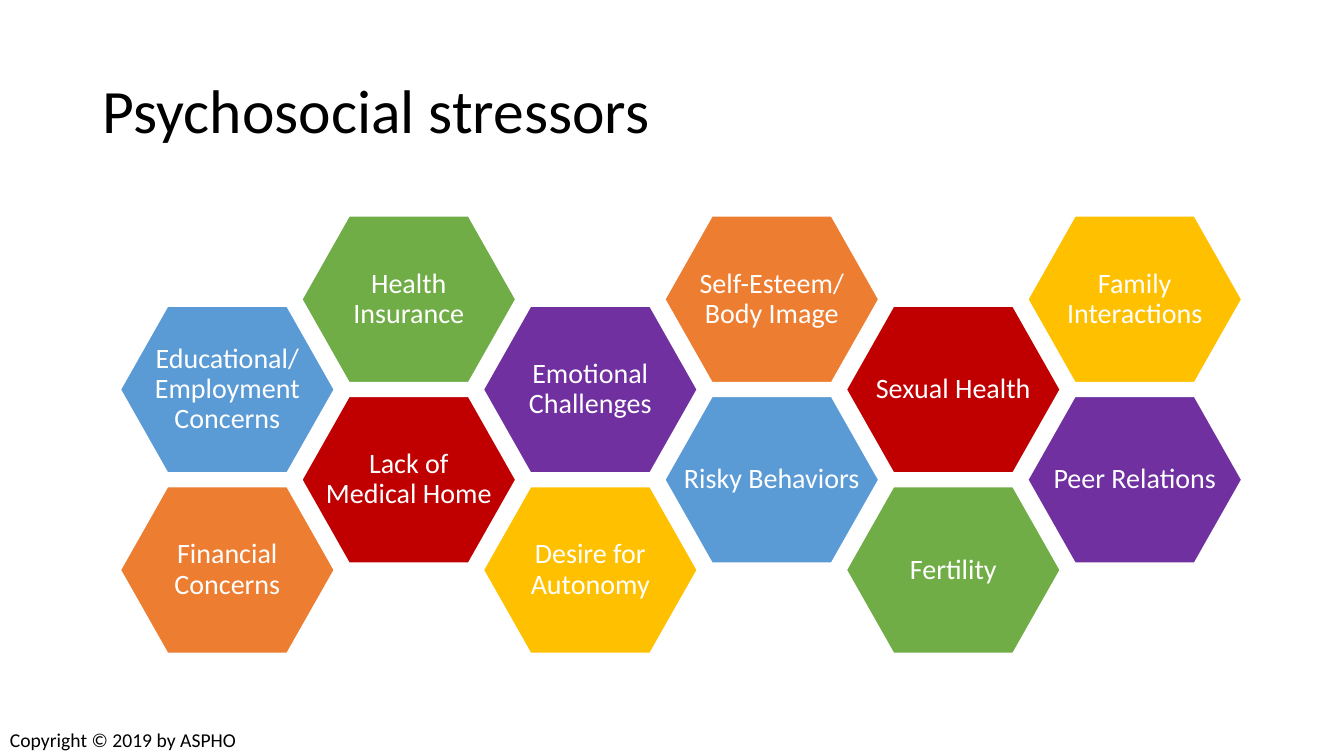
from dataclasses import dataclass

from pptx import Presentation
from pptx.dml.color import RGBColor
from pptx.enum.shapes import MSO_SHAPE
from pptx.enum.text import MSO_ANCHOR, MSO_AUTO_SIZE, PP_ALIGN
from pptx.util import Inches, Pt

TITLE = "Psychosocial stressors"
COPYRIGHT = "Copyright © 2019 by ASPHO"

# One entry per column, each with its upper and lower stressor.
COLUMNS = [
    [("Educational/\vEmployment\vConcerns", "blue"), ("Financial\vConcerns", "orange")],
    [("Health\vInsurance", "green"), ("Lack of\vMedical Home", "red")],
    [("Emotional\vChallenges", "purple"), ("Desire for\vAutonomy", "yellow")],
    [("Self-Esteem/\vBody Image", "orange"), ("Risky Behaviors", "blue")],
    [("Sexual Health", "red"), ("Fertility", "green")],
    [("Family\vInteractions", "yellow"), ("Peer Relations", "purple")],
]


@dataclass(frozen=True)
class Theme:
    font: str = "Calibri"
    text: str = "000000"
    light: str = "FFFFFF"
    blue: str = "5B9BD5"
    orange: str = "ED7D31"
    green: str = "70AD47"
    red: str = "C00000"
    purple: str = "7030A0"
    yellow: str = "FFC000"
    title_size: int = 44
    label_size: int = 20
    copyright_size: int = 14
    outline: float = 1.5


THEME = Theme()

# Honeycomb measures in inches
COMB_LEFT, COMB_TOP = 1.19, 2.14
HEX_WIDTH, HEX_HEIGHT, HEX_CORNER = 2.13, 1.66, 0.47
COLUMN_STEP, ROW_STEP = 1.8, 1.79
STAGGER = ROW_STEP / 2


def rgb(color):
    return RGBColor.from_string(color)


def write(frame, text, size, color, align=PP_ALIGN.LEFT, spacing=1.0):
    frame.text = text
    paragraph = frame.paragraphs[0]
    paragraph.alignment = align
    paragraph.line_spacing = spacing
    for run in paragraph.runs:
        run.font.name = THEME.font
        run.font.size = Pt(size)
        run.font.color.rgb = rgb(color)


def add_title(slide):
    title = slide.shapes.title
    title.left, title.top = Inches(0.92), Inches(0.4)
    title.width, title.height = Inches(11.5), Inches(1.45)
    frame = title.text_frame
    frame.auto_size = MSO_AUTO_SIZE.NONE
    frame.vertical_anchor = MSO_ANCHOR.MIDDLE
    write(frame, TITLE, THEME.title_size, THEME.text, spacing=0.9)


def add_stressor(slide, label, color, left, top):
    hexagon = slide.shapes.add_shape(
        MSO_SHAPE.HEXAGON, Inches(left), Inches(top), Inches(HEX_WIDTH), Inches(HEX_HEIGHT)
    )
    hexagon.adjustments[0] = HEX_CORNER / HEX_HEIGHT
    hexagon.shadow.inherit = False
    hexagon.fill.solid()
    hexagon.fill.fore_color.rgb = rgb(getattr(THEME, color))
    hexagon.line.color.rgb = rgb(THEME.light)
    hexagon.line.width = Pt(THEME.outline)
    frame = hexagon.text_frame
    frame.word_wrap = False
    frame.vertical_anchor = MSO_ANCHOR.MIDDLE
    write(frame, label, THEME.label_size, THEME.light, PP_ALIGN.CENTER, 0.9)


def add_honeycomb(slide):
    """Place the columns side by side, with every other one raised."""
    for column, stressors in enumerate(COLUMNS):
        left = COMB_LEFT + column * COLUMN_STEP
        column_top = COMB_TOP + (STAGGER if column % 2 == 0 else 0)
        for row, (label, color) in enumerate(stressors):
            add_stressor(slide, label, color, left, column_top + row * ROW_STEP)


def add_copyright(slide):
    box = slide.shapes.add_textbox(Inches(0), Inches(7.17), Inches(2.48), Inches(0.34))
    box.text_frame.word_wrap = False
    write(box.text_frame, COPYRIGHT, THEME.copyright_size, THEME.text)


def main():
    deck = Presentation()
    deck.slide_width, deck.slide_height = Inches(13.33), Inches(7.5)
    slide = deck.slides.add_slide(deck.slide_layouts.get_by_name("Title Only"))
    add_title(slide)
    add_honeycomb(slide)
    add_copyright(slide)
    deck.save("out.pptx")


if __name__ == "__main__":
    main()
